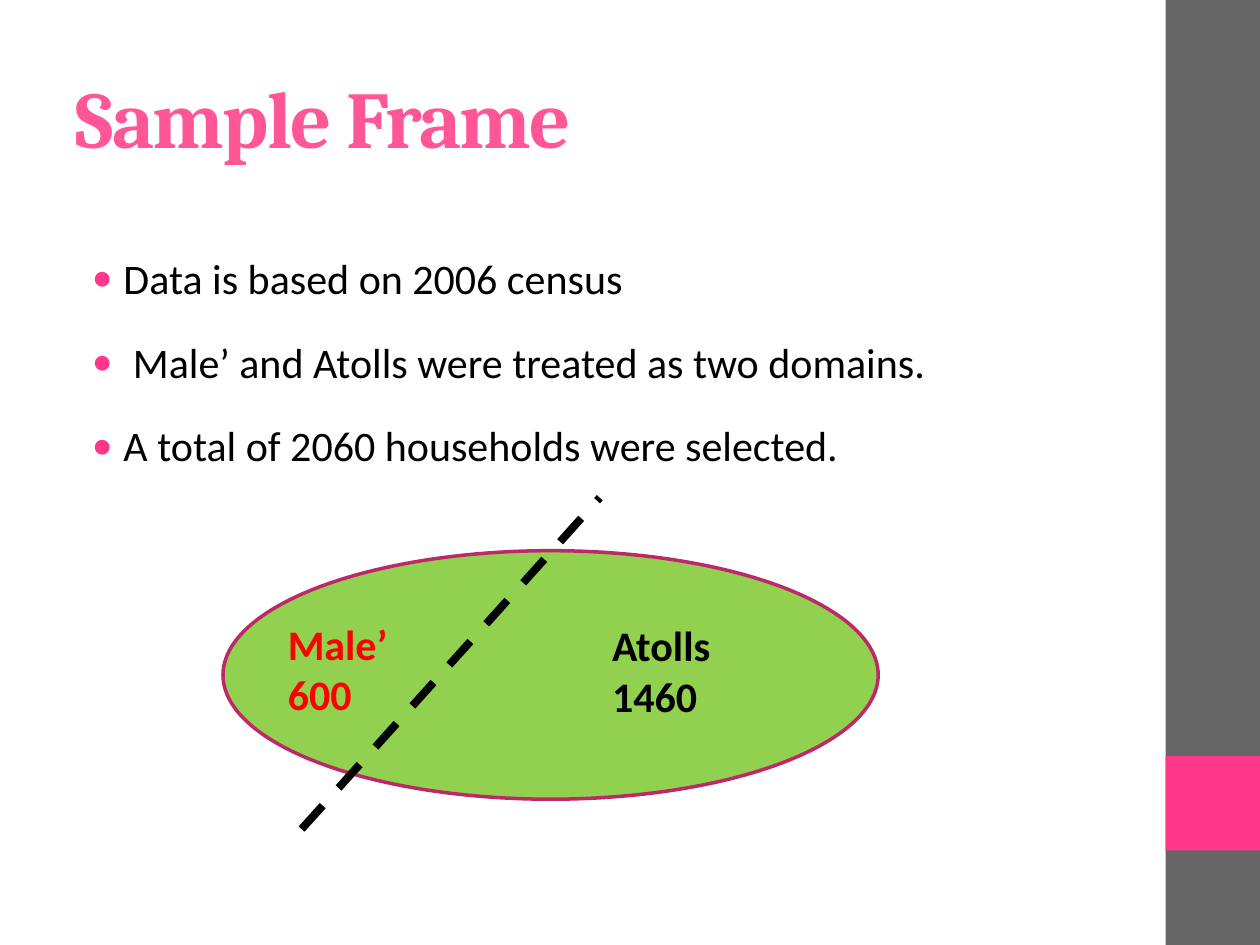
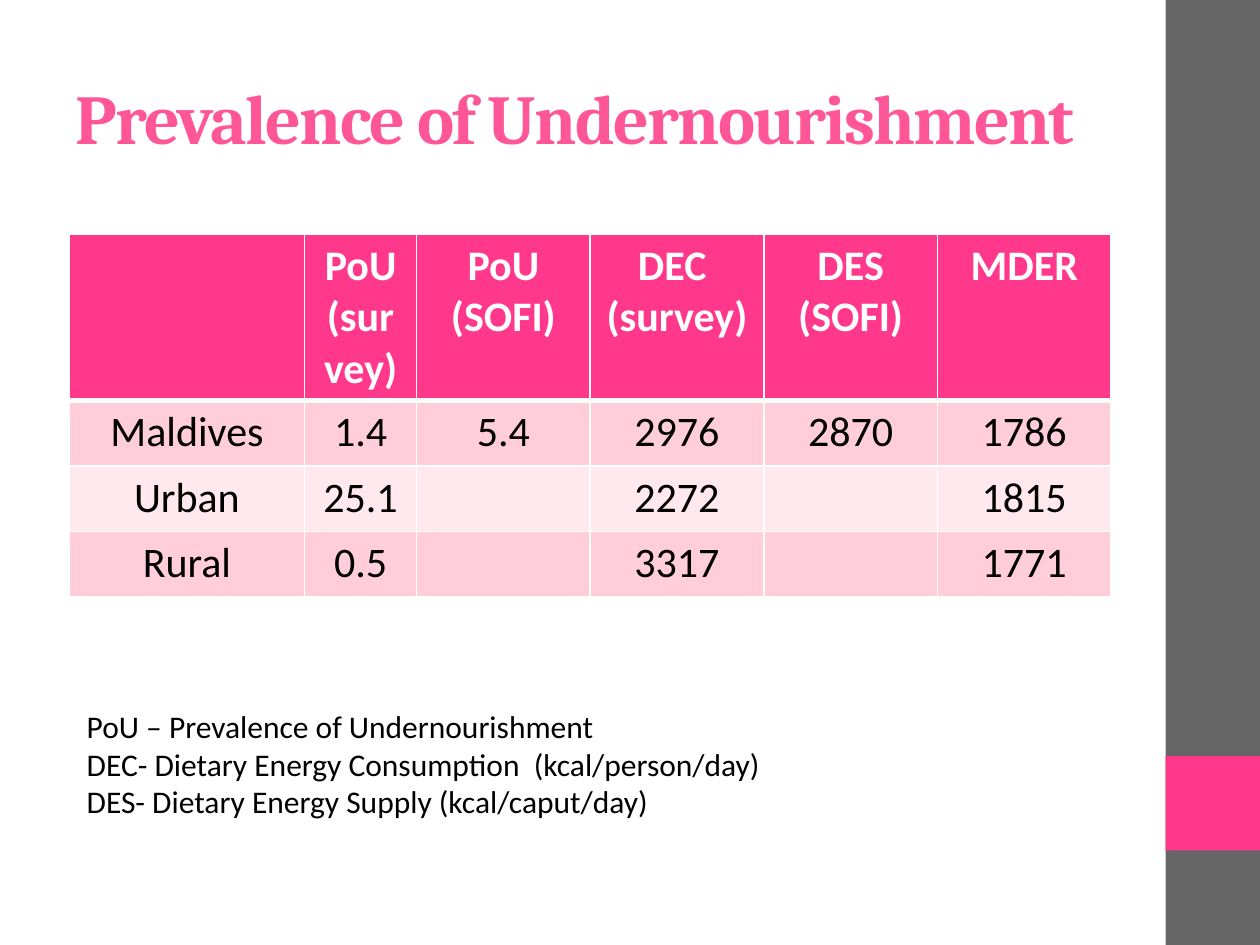
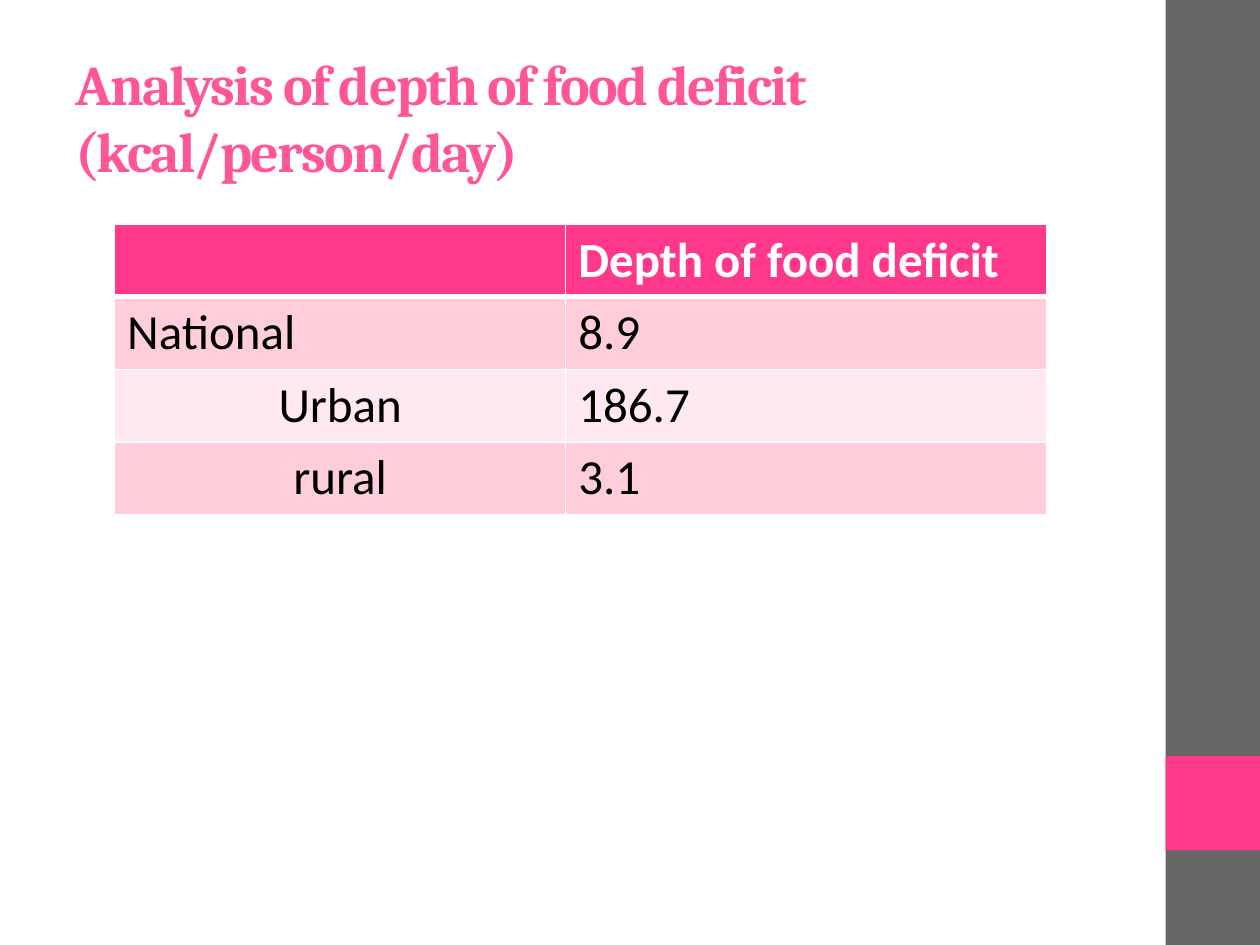
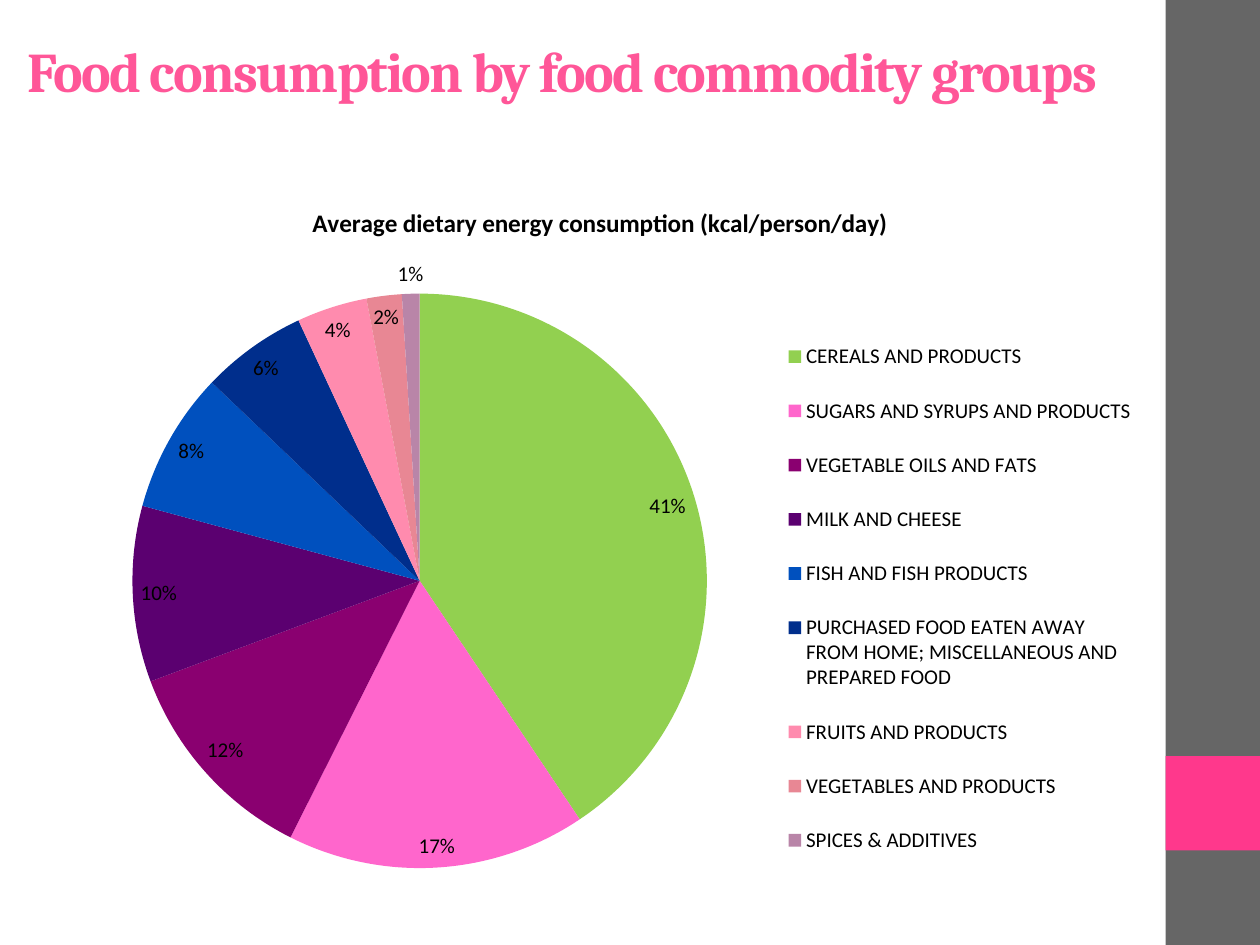
from collections import namedtuple

from lxml.etree import SubElement
from pptx import Presentation
from pptx.chart.data import CategoryChartData
from pptx.dml.color import RGBColor
from pptx.enum.chart import XL_CHART_TYPE, XL_LABEL_POSITION, XL_LEGEND_POSITION
from pptx.enum.dml import MSO_LINE
from pptx.enum.shapes import MSO_CONNECTOR, MSO_SHAPE
from pptx.enum.text import MSO_ANCHOR, MSO_AUTO_SIZE, PP_ALIGN
from pptx.oxml import parse_xml
from pptx.oxml.ns import nsdecls, qn
from pptx.util import Inches, Pt

COLORS = {
    "pink": "FF388C", "title": "FF5698", "gray": "666666", "black": "000000",
    "white": "FFFFFF", "red": "FF0000", "green": "92D050", "outline": "BD2968",
    "row_dark": "FFCEDA", "row_light": "FFE8EE",
    "cereals": "92D050", "sugars": "FF66CC", "oils": "8A0070", "milk": "5B0070",
    "fish": "0050BE", "prepared": "002E8C", "fruits": "FF8BAE",
    "vegetables": "E88794", "spices": "B985A8",
}
SLICES = ["cereals", "sugars", "oils", "milk", "fish", "prepared",
          "fruits", "vegetables", "spices"]
HEADING_FONT, BODY_FONT = "Cambria", "Calibri"
GRID_COLUMNS, GRID_ROWS = 100, 75
SLIDE_WIDTH, SLIDE_HEIGHT = Inches(10), Inches(7.5)


class Box(namedtuple("Box", "left top width height")):
    """A rectangle in columns and rows of the slide grid."""

    def inside(self, left, top, width, height):
        """Return a box given as shares of this one."""
        return Box(self.left + left * self.width, self.top + top * self.height,
                   width * self.width, height * self.height)

    def emu(self):
        """Return left, top, width and height as slide lengths."""
        column, row = SLIDE_WIDTH / GRID_COLUMNS, SLIDE_HEIGHT / GRID_ROWS
        return [int(value * unit) for value, unit in zip(self, (column, row) * 2)]


SLIDE_BOX = Box(0, 0, GRID_COLUMNS, GRID_ROWS)
TITLE_BOX = Box(5, 3, 83.3, 12.5)


def color(name):
    """Look up a colour by name."""
    return RGBColor.from_string(COLORS[name])


def style_font(font, size, color_name, bold=False, name=BODY_FONT):
    """Set the face, size, colour and weight of a font."""
    font.name, font.size, font.bold = name, Pt(size), bold
    font.color.rgb = color(color_name)


def write_lines(text_frame, lines, size, color_name, bold=False, alignment=PP_ALIGN.LEFT):
    """Write one paragraph with one run per line."""
    for index, line in enumerate(lines):
        paragraph = text_frame.add_paragraph() if index else text_frame.paragraphs[0]
        paragraph.alignment = alignment
        run = paragraph.add_run()
        run.text = line
        style_font(run.font, size, color_name, bold)


def move_to(shape, box):
    """Move and size a shape to fill a box."""
    shape.left, shape.top, shape.width, shape.height = box.emu()


def add_filled_shape(slide, kind, box, fill):
    """Add a plain filled shape without line or shadow."""
    shape = slide.shapes.add_shape(kind, *box.emu())
    shape.shadow.inherit = False
    shape.fill.solid()
    shape.fill.fore_color.rgb = color(fill)
    shape.line.fill.background()
    return shape


def add_side_bands(presentation, slide):
    """Build the side bands and hand them to the slide master."""
    side = SLIDE_BOX.inside(0.925, 0, 0.075, 1)
    bands = [(side, "gray"), (side.inside(0, 0.8, 1, 0.1), "pink")]
    for index, (box, fill) in enumerate(bands):
        band = add_filled_shape(slide, MSO_SHAPE.RECTANGLE, box, fill)
        band.element.find(".//" + qn("p:cNvPr")).set("id", str(101 + index))
        presentation.slide_master.shapes.element.insert(2 + index, band.element)


def add_titled_slide(presentation, layout_name, title, size, box=TITLE_BOX):
    """Add a slide and format its title placeholder."""
    layout = presentation.slide_layouts.get_by_name(layout_name)
    slide = presentation.slides.add_slide(layout)
    move_to(slide.shapes.title, box)
    text_frame = slide.shapes.title.text_frame
    text_frame.vertical_anchor = MSO_ANCHOR.MIDDLE
    paragraph = text_frame.paragraphs[0]
    paragraph.alignment = PP_ALIGN.LEFT
    run = paragraph.add_run()
    run.text = title
    style_font(run.font, size, "title", True, HEADING_FONT)
    run._r.get_or_add_rPr().set("spc", "-100")
    return slide


def fill_bullets(placeholder, box, lines):
    """Fill the body placeholder with a spaced bullet list."""
    move_to(placeholder, box)
    write_lines(placeholder.text_frame, lines, 24, "black")
    for paragraph in placeholder.text_frame.paragraphs:
        paragraph.line_spacing = 1.5
        paragraph.space_before = Pt(4.8)
        properties = paragraph._p.get_or_add_pPr()
        properties.set("marL", str(Inches(0.38)))
        properties.set("indent", str(Inches(-0.25)))
        bullet_color = SubElement(properties, qn("a:buClr"))
        SubElement(bullet_color, qn("a:srgbClr")).set("val", COLORS["pink"])
        SubElement(properties, qn("a:buFont")).set("typeface", BODY_FONT)
        SubElement(properties, qn("a:buChar")).set("char", "•")


def add_label(slide, box, lines, size, color_name, bold=False, wrap=True):
    """Add a text box that grows with its lines."""
    text_frame = slide.shapes.add_textbox(*box.emu()).text_frame
    text_frame.word_wrap = wrap
    text_frame.auto_size = MSO_AUTO_SIZE.SHAPE_TO_FIT_TEXT
    write_lines(text_frame, lines, size, color_name, bold)


def add_domain_diagram(slide, box):
    """Draw the sample oval split into two domains by a dashed line."""
    oval = add_filled_shape(slide, MSO_SHAPE.OVAL, box.inside(0, 0.16, 1, 0.75), "green")
    oval.line.color.rgb = color("outline")
    oval.line.width = Pt(2)
    left, top, width, height = box.inside(0.12, 0, 0.455, 1).emu()
    divider = slide.shapes.add_connector(
        MSO_CONNECTOR.STRAIGHT, left, top + height, left + width, top)
    divider.line.color.rgb = color("black")
    divider.line.width = Pt(4.5)
    divider.line.dash_style = MSO_LINE.DASH
    SubElement(divider.element.spPr, qn("a:effectLst"))
    add_label(slide, box.inside(0.08, 0.345, 0.19, 0.345), ["Male’", "600"],
              24, "red", True, False)
    add_label(slide, box.inside(0.575, 0.35, 0.3, 0.345), ["Atolls", "1460"],
              24, "black", True)


def format_cell(cell, fill, bottom_width):
    """Give a cell white borders and a solid fill."""
    properties = cell._tc.get_or_add_tcPr()
    for side, width in (("L", 1), ("R", 1), ("T", 1), ("B", bottom_width)):
        properties.append(parse_xml(
            f'<a:ln{side} {nsdecls("a")} w="{Pt(width)}"><a:solidFill>'
            f'<a:srgbClr val="{COLORS["white"]}"/></a:solidFill></a:ln{side}>'))
    cell.fill.solid()
    cell.fill.fore_color.rgb = color(fill)


def add_banded_table(slide, box, rows, column_shares, header_share, size, centered):
    """Add a table with a pink header and alternating rows."""
    table = slide.shapes.add_table(len(rows), len(rows[0]), *box.emu()).table
    width, height = box.emu()[2:]
    for column, share in zip(table.columns, column_shares):
        column.width = int(width * share / sum(column_shares))
    row_share = (1 - header_share) / (len(rows) - 1)
    for row_index, values in enumerate(rows):
        header = row_index == 0
        table.rows[row_index].height = int(height * (header_share if header else row_share))
        fill = "pink" if header else ("row_light", "row_dark")[row_index % 2]
        for column_index, value in enumerate(values):
            cell = table.cell(row_index, column_index)
            format_cell(cell, fill, 3 if header else 1)
            if value:
                alignment = PP_ALIGN.CENTER if centered(row_index, column_index) else PP_ALIGN.LEFT
                write_lines(cell.text_frame, value.split("\n"), size,
                            "white" if header else "black", header, alignment)


def set_chart_layout(element, index, shares, inner=False):
    """Fix a chart region at shares of the chart's size."""
    for old_layout in element.findall(qn("c:layout")):
        element.remove(old_layout)
    layout = parse_xml(f'<c:layout {nsdecls("c")}><c:manualLayout/></c:layout>')
    settings = [("layoutTarget", "inner")] if inner else []
    settings += [("xMode", "edge"), ("yMode", "edge"), *zip("xywh", shares)]
    for name, value in settings:
        SubElement(layout[0], qn(f"c:{name}")).set("val", str(value))
    element.insert(index, layout)


def add_energy_pie(slide, box, title, groups):
    """Add the pie of energy shares with its legend."""
    data = CategoryChartData()
    data.categories = list(groups)
    data.add_series(title, list(groups.values()))
    chart = slide.shapes.add_chart(XL_CHART_TYPE.PIE, *box.emu(), data).chart
    style_font(chart.font, 12, "black")
    chart.has_title = True
    write_lines(chart.chart_title.text_frame, [title], 14.4, "black", True, PP_ALIGN.CENTER)
    chart.has_legend = True
    chart.legend.position = XL_LEGEND_POSITION.RIGHT
    chart.legend.include_in_layout = False
    style_font(chart.legend.font, 12, "black")
    plot = chart.plots[0]
    plot.vary_by_categories = True
    for index, slice_name in enumerate(SLICES):
        fill = plot.series[0].points[index].format.fill
        fill.solid()
        fill.fore_color.rgb = color(slice_name)
    plot.has_data_labels = True
    labels = plot.data_labels
    labels.show_percentage, labels.show_value = True, False
    labels.number_format, labels.number_format_is_linked = "0%", False
    labels.position = XL_LABEL_POSITION.BEST_FIT
    style_font(labels.font, 12, "black")
    plot_area = chart.element.find(".//" + qn("c:plotArea"))
    legend = chart.element.find(".//" + qn("c:legend"))
    set_chart_layout(plot_area, 0, (0.07, 0.16, 0.53, 0.81), True)
    set_chart_layout(legend, 1, (0.67, 0.19, 0.32, 0.8))


def build_sample_frame(presentation):
    """Build the slide on the sample frame."""
    slide = add_titled_slide(presentation, "Title and Content", "Sample Frame", 46)
    fill_bullets(slide.placeholders[1], Box(5, 17.5, 83.3, 52.5), [
        "Data is based on 2006 census",
        " Male’ and Atolls were treated as two domains.",
        "A total of 2060 households were selected.",
    ])
    add_domain_diagram(slide, Box(17.7, 39.5, 52, 26.3))
    return slide


def build_prevalence(presentation):
    """Build the slide on prevalence of undernourishment."""
    slide = add_titled_slide(presentation, "Title Only", "Prevalence of Undernourishment", 40)
    rows = [
        ["", "PoU (survey)", "PoU (SOFI)", "DEC \n(survey)", "DES\n(SOFI)", "MDER"],
        ["Maldives", "1.4", "5.4", "2976", "2870", "1786"],
        ["Urban", "25.1", "", "2272", "", "1815"],
        ["Rural", "0.5", "", "3317", "", "1771"],
    ]
    add_banded_table(slide, Box(5.5, 18.6, 82.7, 28.6), rows,
                     [1.87, 0.89] + [1.38] * 4, 0.455, 24, lambda row, column: True)
    add_label(slide, Box(5.9, 55.6, 78.7, 10.1), [
        "PoU – Prevalence of Undernourishment",
        "DEC- Dietary Energy Consumption  (kcal/person/day)",
        "DES- Dietary Energy Supply (kcal/caput/day)",
    ], 18, "black")


def build_food_deficit(presentation):
    """Build the slide on depth of food deficit."""
    slide = add_titled_slide(presentation, "Title Only",
                             "Analysis of depth of food deficit (kcal/person/day)", 32)
    rows = [["", "Depth of food deficit"], ["National", "8.9"],
            ["Urban", "186.7"], ["rural", "3.1"]]
    add_banded_table(slide, Box(9.1, 17.8, 74, 23), rows, [3.58, 3.82], 0.25, 28,
                     lambda row, column: row > 1 and column == 0)


def build_food_groups(presentation):
    """Build the slide on consumption by food group."""
    slide = add_titled_slide(presentation, "Title Only",
                             "Food consumption by food commodity groups", 32,
                             Box(1.2, 2.1, 89.8, 6.9))
    groups = {
        "CEREALS AND PRODUCTS": 41,
        "SUGARS AND SYRUPS AND PRODUCTS": 17,
        "VEGETABLE OILS AND FATS": 12,
        "MILK AND CHEESE": 10,
        "FISH AND FISH PRODUCTS": 8,
        "PURCHASED FOOD EATEN AWAY FROM HOME; MISCELLANEOUS AND PREPARED FOOD": 6,
        "FRUITS AND PRODUCTS": 4,
        "VEGETABLES AND PRODUCTS": 2,
        "SPICES & ADDITIVES": 1,
    }
    add_energy_pie(slide, Box(4.3, 14.3, 86.6, 56.3),
                   "Average dietary energy consumption (kcal/person/day)", groups)


def main():
    """Build and save the presentation."""
    presentation = Presentation()
    presentation.slide_width, presentation.slide_height = SLIDE_WIDTH, SLIDE_HEIGHT
    first_slide = build_sample_frame(presentation)
    add_side_bands(presentation, first_slide)
    build_prevalence(presentation)
    build_food_deficit(presentation)
    build_food_groups(presentation)
    presentation.save("out.pptx")


if __name__ == "__main__":
    main()
